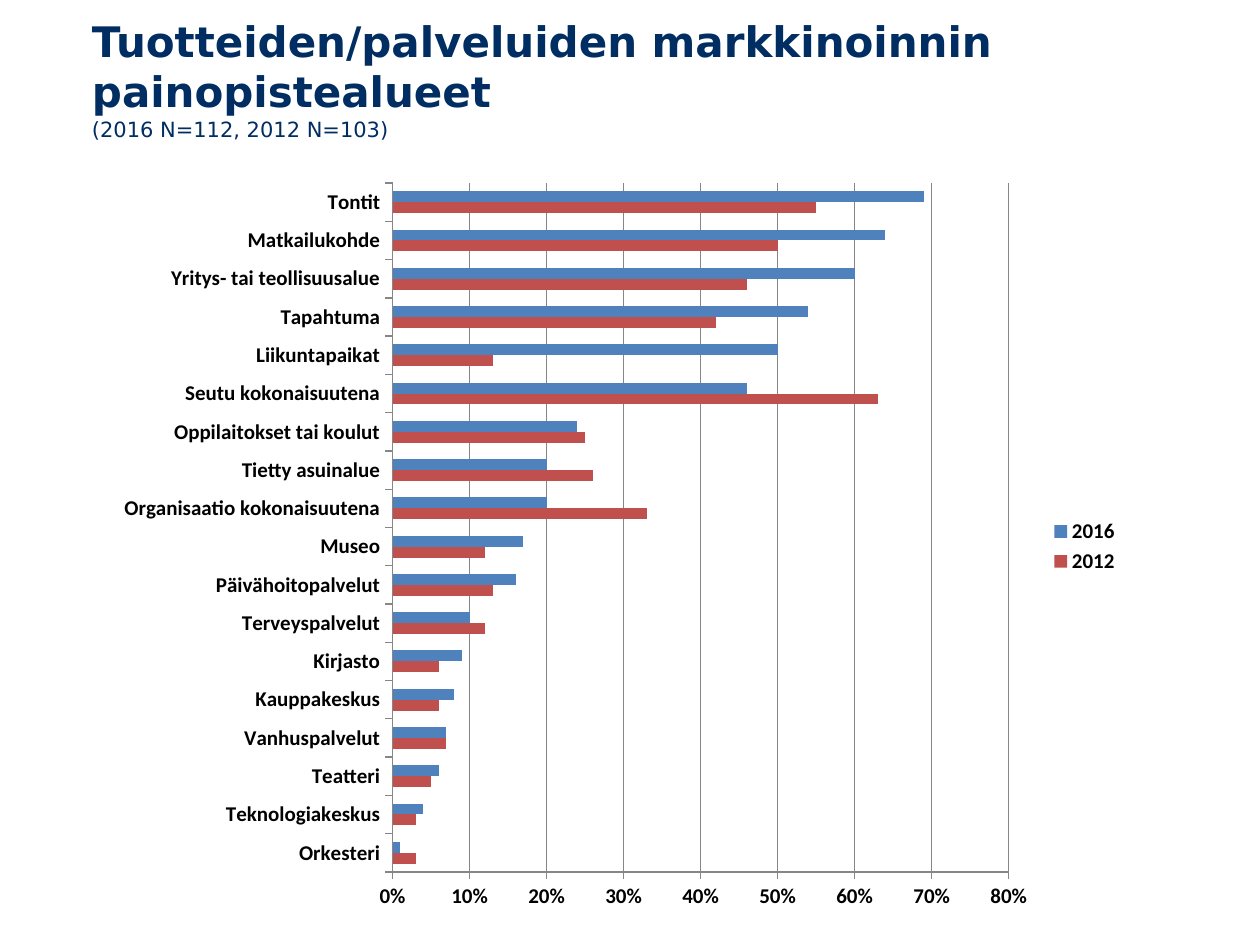
from lxml import etree
from pptx import Presentation
from pptx.chart.data import CategoryChartData
from pptx.dml.color import RGBColor
from pptx.enum.chart import XL_CHART_TYPE, XL_LEGEND_POSITION, XL_TICK_MARK
from pptx.enum.text import MSO_ANCHOR
from pptx.oxml.ns import qn
from pptx.util import Pt

PX = 914400 // 126
BAR_CLUSTERED = XL_CHART_TYPE.BAR_CLUSTERED
LEGEND_RIGHT = XL_LEGEND_POSITION.RIGHT
TICK_OUTSIDE, TICK_NONE = XL_TICK_MARK.OUTSIDE, XL_TICK_MARK.NONE
MIDDLE = MSO_ANCHOR.MIDDLE


def color(hex_string):
    return RGBColor.from_string(hex_string)


presentation = Presentation()
presentation.slide_width = 1260 * PX
presentation.slide_height = 945 * PX
slide = presentation.slides.add_slide(presentation.slide_layouts[6])

# Title
title = slide.shapes.add_textbox(92 * PX, 13 * PX, 1075 * PX, 131 * PX)
frame = title.text_frame
frame.word_wrap = True
frame.vertical_anchor = MIDDLE
frame.margin_left = frame.margin_right = frame.margin_top = frame.margin_bottom = 0
paragraph = frame.paragraphs[0]
paragraph.font.name = "DejaVu Sans"
paragraph.font.color.rgb = color("002D62")
heading = paragraph.add_run()
heading.text = "Tuotteiden/palveluiden markkinoinnin painopistealueet"
heading.font.size = Pt(24)
heading.font.bold = True
paragraph.add_line_break()
sample = paragraph.add_run()
sample.text = "(2016 N=112, 2012 N=103)"
sample.font.size = Pt(12)

# Marketing focus areas: category, 2012, 2016
focus_areas = [
    ("Orkesteri", 0.03, 0.01),
    ("Teknologiakeskus", 0.03, 0.04),
    ("Teatteri", 0.05, 0.06),
    ("Vanhuspalvelut", 0.07, 0.07),
    ("Kauppakeskus", 0.06, 0.08),
    ("Kirjasto", 0.06, 0.09),
    ("Terveyspalvelut", 0.12, 0.10),
    ("Päivähoitopalvelut", 0.13, 0.16),
    ("Museo", 0.12, 0.17),
    ("Organisaatio kokonaisuutena", 0.33, 0.20),
    ("Tietty asuinalue", 0.26, 0.20),
    ("Oppilaitokset tai koulut", 0.25, 0.24),
    ("Seutu kokonaisuutena", 0.63, 0.46),
    ("Liikuntapaikat", 0.13, 0.50),
    ("Tapahtuma", 0.42, 0.54),
    ("Yritys- tai teollisuusalue", 0.46, 0.60),
    ("Matkailukohde", 0.50, 0.64),
    ("Tontit", 0.55, 0.69),
]
names, shares_2012, shares_2016 = zip(*focus_areas)
chart_data = CategoryChartData(number_format="0%")
chart_data.categories = names
chart_data.add_series("2012", shares_2012)
chart_data.add_series("2016", shares_2016)
chart = slide.shapes.add_chart(
    BAR_CLUSTERED, 105 * PX, 168 * PX, 1027 * PX, 757 * PX, chart_data
).chart
chart.has_title = False
chart.font.name = "Calibri"
chart.font.size = Pt(12)
chart.font.bold = True
chart.font.color.rgb = color("000000")
chart.has_legend = True
chart.legend.position = LEGEND_RIGHT
chart.legend.include_in_layout = False

plot = chart.plots[0]
plot.gap_width = 150
plot.overlap = 0
plot.vary_by_categories = False
for series, fill in zip(plot.series, ("C0504D", "4F81BD")):
    series.format.fill.solid()
    series.format.fill.fore_color.rgb = color(fill)

value_axis = chart.value_axis
value_axis.minimum_scale = 0
value_axis.maximum_scale = 0.8
value_axis.major_unit = 0.1
value_axis.has_major_gridlines = True
value_axis.tick_labels.number_format = "0%"
value_axis.tick_labels.number_format_is_linked = False
for axis in (chart.category_axis, value_axis):
    axis.major_tick_mark = TICK_OUTSIDE
    axis.minor_tick_mark = TICK_NONE
for line in (chart.category_axis.format.line, value_axis.format.line,
             value_axis.major_gridlines.format.line):
    line.color.rgb = color("868686")
    line.width = Pt(0.75)

# Fix the inner plot area as fractions of the chart
plot_area = chart._chartSpace.chart.plotArea
for old_layout in plot_area.findall(qn("c:layout")):
    plot_area.remove(old_layout)
layout = etree.Element(qn("c:layout"))
manual = etree.SubElement(layout, qn("c:manualLayout"))
for tag, value in (("layoutTarget", "inner"), ("xMode", "edge"), ("yMode", "edge"),
                   ("x", "0.28"), ("y", "0.02"), ("w", "0.6"), ("h", "0.91")):
    etree.SubElement(manual, qn(f"c:{tag}"), val=value)
plot_area.insert(0, layout)

presentation.save("out.pptx")
